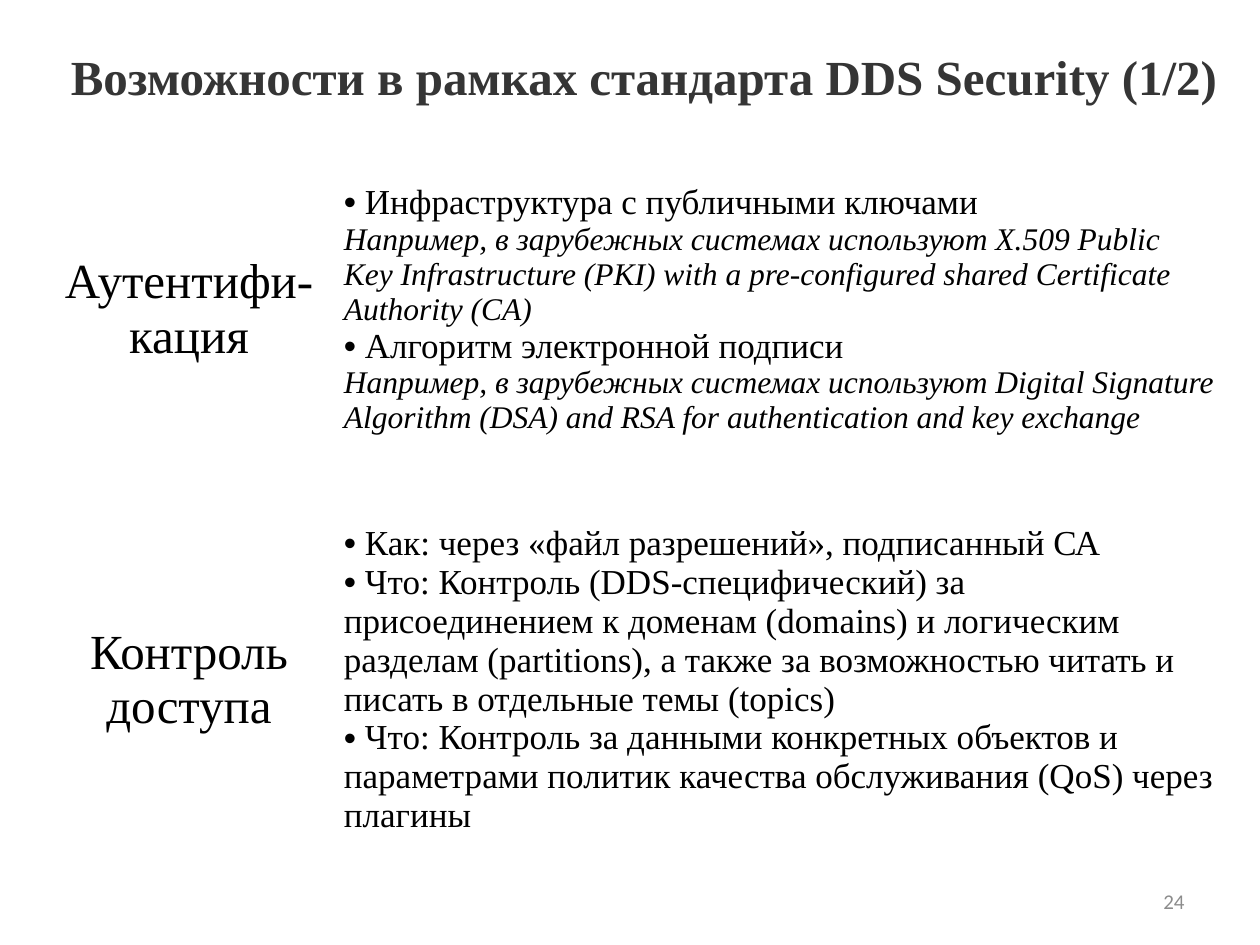
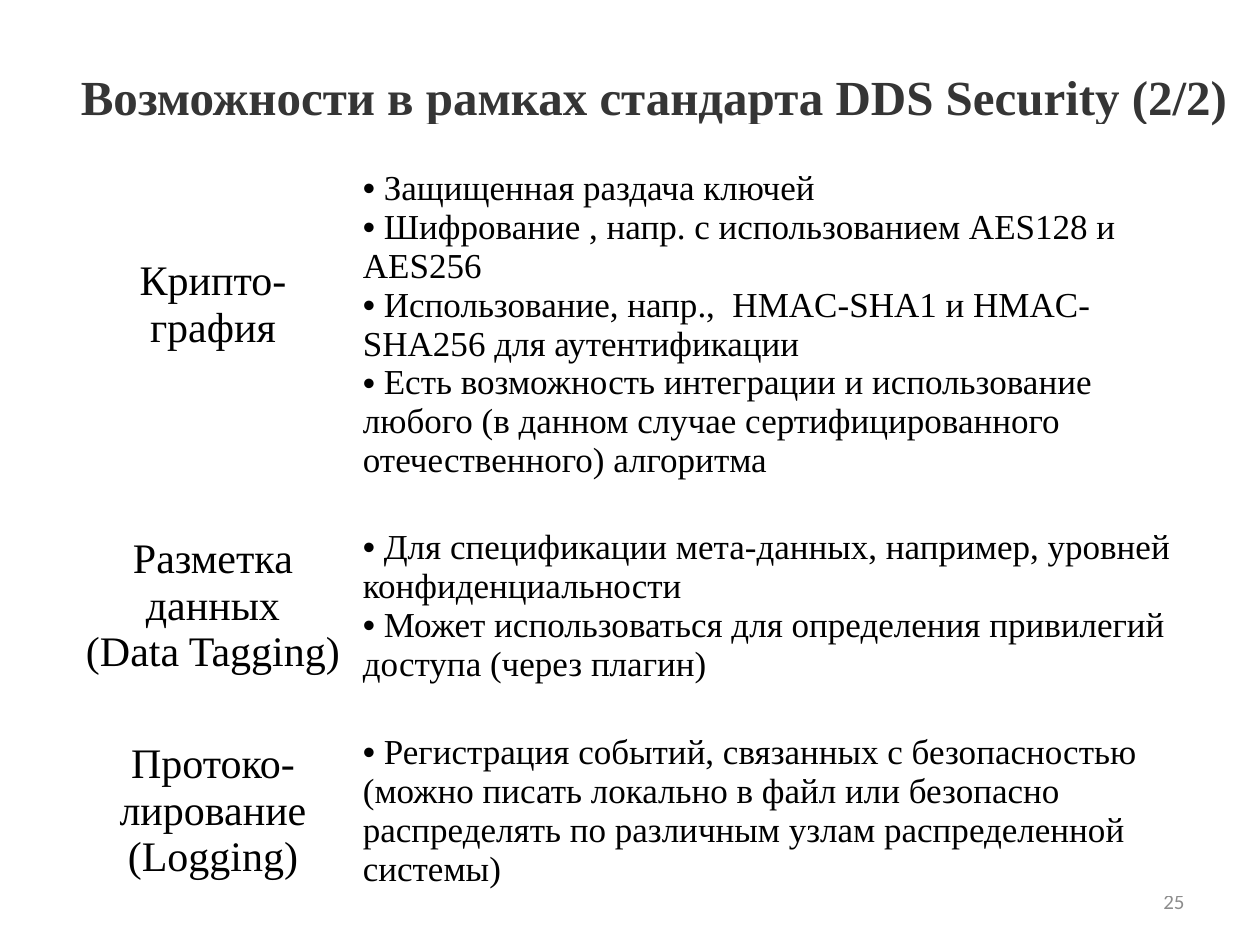
from lxml import etree
from pptx import Presentation
from pptx.dml.color import RGBColor
from pptx.enum import text as t
from pptx.oxml.ns import qn
from pptx.util import Inches, Pt

BLACK = RGBColor(0, 0, 0)
TITLE_GREY = RGBColor(0x35, 0x35, 0x35)
NUMBER_GREY = RGBColor(0x8C, 0x8C, 0x8C)
SERIF, SANS, BULLET_FONT = "Times New Roman", "Calibri", "Arial"
MIDDLE, BOTTOM = t.MSO_ANCHOR.MIDDLE, t.MSO_ANCHOR.BOTTOM
LABEL_INSET, POINTS_INSET, BOTTOM_INSET = 0.07, 0.09, 0.04
TITLE = "Возможности в рамках стандарта DDS Security ({}/{})"
BULLET, NOTE = "bullet", "note"

# Each row: label lines, points as (kind, text), row height, anchor of the points
SLIDES = [
    dict(
        number=24, title_at=(0.51, 0.37), table_at=(0.36, 0.92),
        columns=(2.28, 7.09), label_size=28,
        rows=[
            (["Аутентифи-кация"], [
                (BULLET, "Инфраструктура с публичными ключами"),
                (NOTE, "Например, в зарубежных системах используют X.509 Public Key "
                       "Infrastructure (PKI) with a pre-configured shared Certificate "
                       "Authority (CA)"),
                (BULLET, "Алгоритм электронной подписи"),
                (NOTE, "Например, в зарубежных системах используют Digital Signature "
                       "Algorithm (DSA) and RSA for authentication and key exchange"),
            ], 3.07, MIDDLE),
            (["Контроль доступа"], [
                (BULLET, "Как: через «файл разрешений», подписанный СА"),
                (BULLET, "Что: Контроль (DDS-специфический) за присоединением к доменам "
                         "(domains) и логическим разделам (partitions), а также за "
                         "возможностью читать и писать в отдельные темы (topics)"),
                (BULLET, "Что: Контроль за данными конкретных объектов и параметрами "
                         "политик качества обслуживания (QoS) через плагины"),
            ], 2.81, MIDDLE),
        ],
    ),
    dict(
        number=25, title_at=(0.59, 0.53), table_at=(0.59, 0.99),
        columns=(2.2, 6.69), label_size=24,
        rows=[
            (["Крипто-графия"], [
                (BULLET, "Защищенная раздача ключей"),
                (BULLET, "Шифрование , напр. с использованием AES128 и AES256"),
                (BULLET, "Использование, напр.,  HMAC-SHA1 и HMAC-SHA256 для "
                         "аутентификации"),
                (BULLET, "Есть возможность интеграции и использование любого (в данном "
                         "случае сертифицированного отечественного) алгоритма"),
            ], 2.86, BOTTOM),
            (["Разметка данных", "(Data Tagging)"], [
                (BULLET, "Для спецификации мета-данных, например, уровней "
                         "конфиденциальности"),
                (BULLET, "Может использоваться для определения привилегий доступа "
                         "(через плагин)"),
            ], 1.92, MIDDLE),
            (["Протоко-лирование", "(Logging)"], [
                (BULLET, "Регистрация событий, связанных с безопасностью (можно писать "
                         "локально в файл или безопасно распределять по различным узлам "
                         "распределенной системы)"),
            ], 1.32, MIDDLE),
        ],
    ),
]


def write(frame, content, *, size, font=SERIF, color=BLACK, bold=False, italic=False,
          align=t.PP_ALIGN.LEFT, bullet=False):
    """Fill the frame's empty first paragraph, or append another one."""
    first = frame.paragraphs[0]
    paragraph = frame.add_paragraph() if first.runs else first
    paragraph.alignment = align
    if bullet:
        properties = paragraph._p.get_or_add_pPr()
        properties.set("marL", "0")
        properties.set("indent", "0")
        etree.SubElement(properties, qn("a:buFont")).set("typeface", BULLET_FONT)
        etree.SubElement(properties, qn("a:buChar")).set("char", "•")
        content = " " + content
    run = paragraph.add_run()
    run.text = content
    run.font.name, run.font.size = font, Pt(size)
    run.font.bold, run.font.italic = bold, italic
    run.font.color.rgb = color


def add_title(slide, content, left, top):
    title = slide.shapes.title
    title.left, title.top = Inches(left), Inches(top)
    title.width, title.height = Inches(9.2), Inches(0.77)
    frame = title.text_frame
    frame.margin_left = frame.margin_right = frame.margin_top = frame.margin_bottom = 0
    frame.word_wrap = False
    frame.auto_size = t.MSO_AUTO_SIZE.NONE
    frame.vertical_anchor = t.MSO_ANCHOR.TOP
    write(frame, content, size=28, color=TITLE_GREY, bold=True, align=t.PP_ALIGN.CENTER)


def add_number(slide, number):
    box = slide.shapes.add_textbox(Inches(7.17), Inches(6.95), Inches(2.33), Inches(0.4))
    frame = box.text_frame
    frame.word_wrap = True
    frame.vertical_anchor = MIDDLE
    write(frame, str(number), size=12, font=SANS, color=NUMBER_GREY,
          align=t.PP_ALIGN.RIGHT)


def prepare_cell(cell, side_inset, anchor=MIDDLE):
    cell.fill.background()
    cell.vertical_anchor = anchor
    cell.margin_left = cell.margin_right = Inches(side_inset)
    cell.margin_top = 0
    cell.margin_bottom = Inches(BOTTOM_INSET if anchor == BOTTOM else 0)
    return cell.text_frame


def add_features(slide, rows, columns, table_at, label_size):
    left, top = table_at
    height = sum(row[2] for row in rows)
    features = slide.shapes.add_table(len(rows), len(columns), Inches(left), Inches(top),
                                      Inches(sum(columns)), Inches(height)).table
    features.first_row = features.horz_banding = False
    for column, width in zip(features.columns, columns):
        column.width = Inches(width)
    for index, (label, points, row_height, anchor) in enumerate(rows):
        features.rows[index].height = Inches(row_height)
        label_frame = prepare_cell(features.cell(index, 0), LABEL_INSET)
        for line in label:
            write(label_frame, line, size=label_size, align=t.PP_ALIGN.CENTER)
        points_frame = prepare_cell(features.cell(index, 1), POINTS_INSET, anchor)
        for kind, content in points:
            write(points_frame, content, size=20 if kind == BULLET else 18,
                  italic=kind == NOTE, bullet=kind == BULLET)


def main():
    prs = Presentation()
    prs.slide_width, prs.slide_height = Inches(10), Inches(7.5)
    title_only = prs.slide_layouts[5]
    for part, content in enumerate(SLIDES, start=1):
        slide = prs.slides.add_slide(title_only)
        add_number(slide, content["number"])
        add_features(slide, content["rows"], content["columns"], content["table_at"],
                     content["label_size"])
        add_title(slide, TITLE.format(part, len(SLIDES)), *content["title_at"])
    prs.save("out.pptx")


if __name__ == "__main__":
    main()
